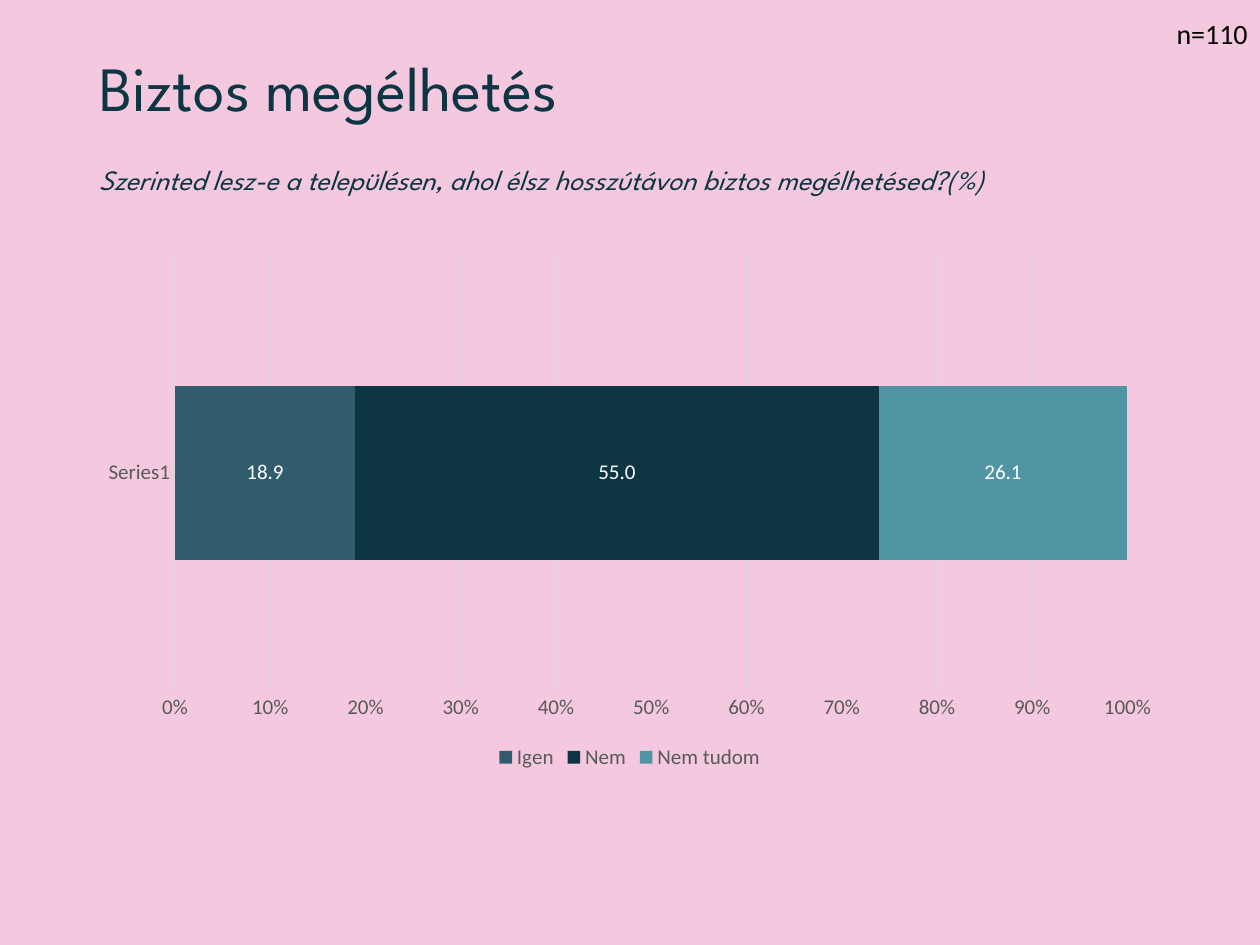
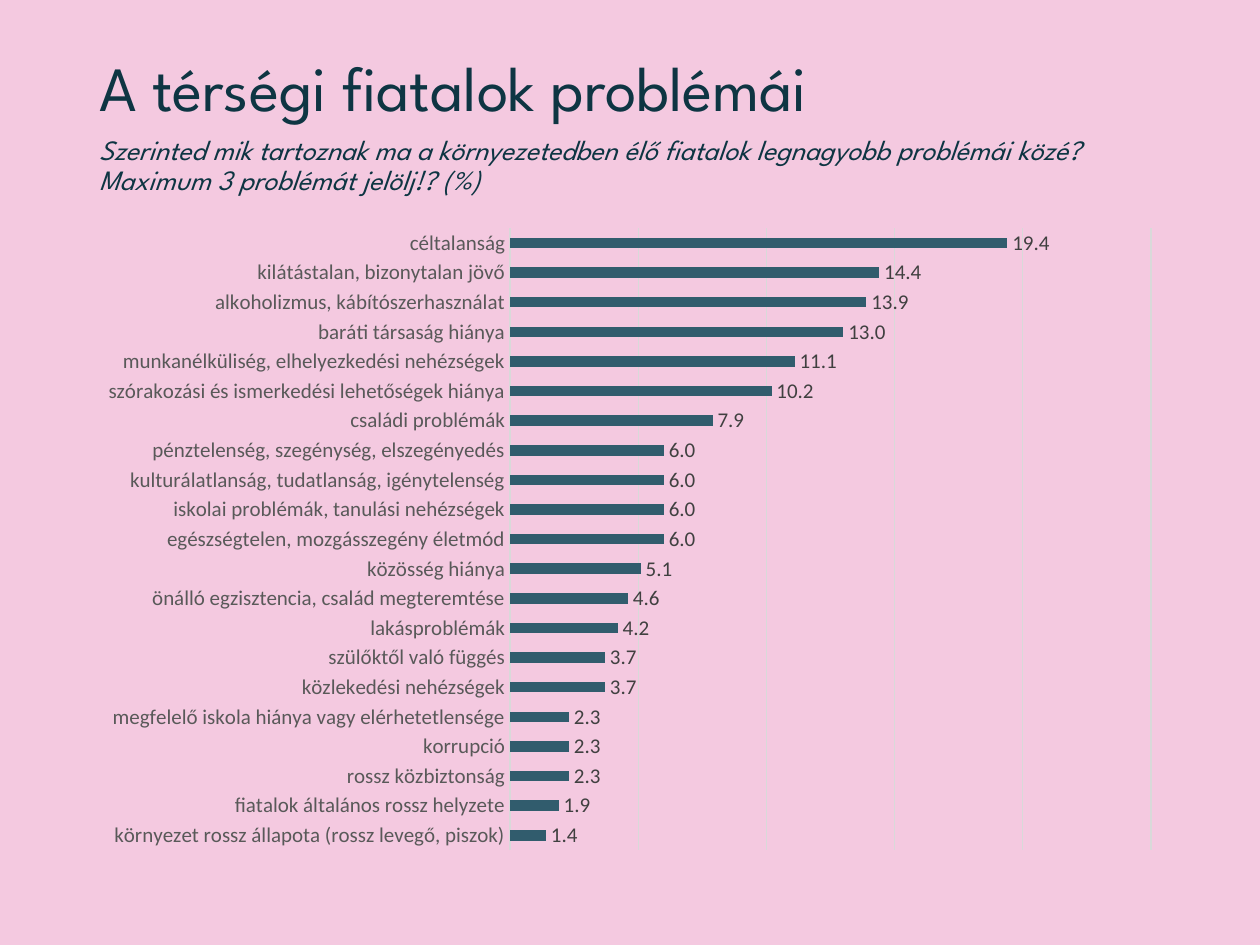
from pptx import Presentation
from pptx.chart.data import CategoryChartData
from pptx.dml.color import RGBColor
from pptx.enum.chart import (XL_CHART_TYPE, XL_LABEL_POSITION,
                             XL_LEGEND_POSITION, XL_TICK_MARK)
from pptx.enum.text import MSO_ANCHOR, PP_ALIGN
from pptx.util import Cm, Pt

PINK, NAVY, SLATE, TEAL = "F4C9E0", "0E3543", "315C6D", "5195A4"
GREY, DARK_GREY, LINE_GREY, WHITE, BLACK = "595959", "404040", "D9D9D9", "FFFFFF", "000000"
LEFT, CHART_WIDTH, QUESTION_WIDTH = 1.75, 21.89, 21.41

TITLE = {"name": "League Spartan", "size": Pt(36), "color": NAVY}
QUESTION = {"name": "League Spartan", "size": Pt(16), "color": NAVY, "italic": True}
SAMPLE = {"name": "Calibri", "size": Pt(16), "color": BLACK}
AXIS = {"name": "Calibri", "size": Pt(12), "color": GREY}
BAR_LABEL = {**AXIS, "color": DARK_GREY}
STACK_LABEL = {**AXIS, "color": WHITE}

LIVELIHOOD = {"Igen": (18.9, SLATE), "Nem": (55, NAVY), "Nem tudom": (26.1, TEAL)}
PROBLEMS = {
    "céltalanság": 19.4,
    "kilátástalan, bizonytalan jövő": 14.4,
    "alkoholizmus, kábítószerhasználat": 13.9,
    "baráti társaság hiánya": 13,
    "munkanélküliség, elhelyezkedési nehézségek": 11.1,
    "szórakozási és ismerkedési lehetőségek hiánya": 10.2,
    "családi problémák": 7.9,
    "pénztelenség, szegénység, elszegényedés": 6,
    "kulturálatlanság, tudatlanság, igénytelenség": 6,
    "iskolai problémák, tanulási nehézségek": 6,
    "egészségtelen, mozgásszegény életmód": 6,
    "közösség hiánya": 5.1,
    "önálló egzisztencia, család megteremtése": 4.6,
    "lakásproblémák": 4.2,
    "szülőktől való függés": 3.7,
    "közlekedési nehézségek": 3.7,
    "megfelelő iskola hiánya vagy elérhetetlensége": 2.3,
    "korrupció": 2.3,
    "rossz közbiztonság": 2.3,
    "fiatalok általános rossz helyzete": 1.9,
    "környezet rossz állapota (rossz levegő, piszok)": 1.4,
}


def paint(color_format, value):
    """Give a colour format the colour of a hex string."""
    color_format.rgb = RGBColor.from_string(value)


def fill_solid(fill, value):
    """Make a fill solid in one colour."""
    fill.solid()
    paint(fill.fore_color, value)


def format_font(font, values):
    """Set font attributes from a dict of format values."""
    for key, value in values.items():
        if key == "color":
            paint(font.color, value)
        else:
            setattr(font, key, value)


def add_text(page, words, place, values, align=PP_ALIGN.LEFT, spacing=0.9):
    """Add a wrapping text box with one paragraph."""
    box = page.shapes.add_textbox(*map(Cm, place))
    frame = box.text_frame
    frame.word_wrap = True
    frame.vertical_anchor = MSO_ANCHOR.TOP
    para = frame.paragraphs[0]
    para.alignment = align
    para.line_spacing = spacing
    span = para.add_run()
    span.text = words
    format_font(span.font, values)


def add_page(deck, title, question, question_top):
    """Add a pink page with its title and survey question."""
    page = deck.slides.add_slide(deck.slide_layouts[6])
    fill_solid(page.background.fill, PINK)
    add_text(page, title, (LEFT, 1.02, CHART_WIDTH, 2.03), TITLE)
    add_text(page, question, (LEFT, question_top, QUESTION_WIDTH, 1.37), QUESTION)
    return page


def draw_line(line):
    """Give a chart line its thin grey look."""
    paint(line.color, LINE_GREY)
    line.width = Pt(0.75)


def add_bars(page, kind, categories, series, top, height, gap, label_font, label_position):
    """Add a bar chart from a dict of series names to values and colours."""
    data = CategoryChartData(number_format="0.0")
    data.categories = categories
    for name, (values, _) in series.items():
        data.add_series(name, values)
    frame = page.shapes.add_chart(kind, *map(Cm, (LEFT, top, CHART_WIDTH, height)), data)
    chart = frame.chart
    chart.has_title = False
    chart.has_legend = False
    format_font(chart.font, AXIS)
    for axis in (chart.category_axis, chart.value_axis):
        axis.major_tick_mark = axis.minor_tick_mark = XL_TICK_MARK.NONE
        format_font(axis.tick_labels.font, AXIS)
    draw_line(chart.category_axis.format.line)
    chart.category_axis.has_major_gridlines = False
    chart.value_axis.format.line.fill.background()
    chart.value_axis.has_major_gridlines = True
    draw_line(chart.value_axis.major_gridlines.format.line)
    plot = chart.plots[0]
    plot.gap_width = gap
    plot.vary_by_categories = False
    for bars, (_, color) in zip(plot.series, series.values()):
        fill_solid(bars.format.fill, color)
        bars.invert_if_negative = False
        labels = bars.data_labels
        labels.show_value = True
        labels.position = label_position
        labels.number_format = "0.0"
        labels.number_format_is_linked = False
        format_font(labels.font, label_font)
    return chart


def add_livelihood(deck):
    """Add the page about a secure livelihood."""
    page = add_page(
        deck, "Biztos megélhetés",
        "Szerinted lesz-e a településen, ahol élsz hosszútávon biztos megélhetésed?(%)", 3.23)
    series = {name: ([value], color) for name, (value, color) in LIVELIHOOD.items()}
    chart = add_bars(page, XL_CHART_TYPE.BAR_STACKED_100, ["Series1"], series,
                     4.93, 10.69, 150, STACK_LABEL, XL_LABEL_POSITION.CENTER)
    chart.plots[0].overlap = 100
    chart.value_axis.major_unit = 0.1
    chart.value_axis.tick_labels.number_format = "0%"
    chart.value_axis.tick_labels.number_format_is_linked = False
    chart.has_legend = True
    chart.legend.position = XL_LEGEND_POSITION.BOTTOM
    chart.legend.include_in_layout = False
    format_font(chart.legend.font, AXIS)
    add_text(page, "n=110", (14.45, 0.2, 10.95, 0.94), SAMPLE, PP_ALIGN.RIGHT, 1.0)


def add_problems(deck):
    """Add the page about the problems of young people."""
    page = add_page(
        deck, "A térségi fiatalok problémái",
        "Szerinted mik tartoznak ma a környezetedben élő fiatalok legnagyobb problémái közé? "
        "Maximum 3 problémát jelölj!? (%)", 2.62)
    names, values = zip(*reversed(PROBLEMS.items()))
    chart = add_bars(page, XL_CHART_TYPE.BAR_CLUSTERED, names, {"Series 1": (values, SLATE)},
                     4.34, 13.06, 182, BAR_LABEL, XL_LABEL_POSITION.OUTSIDE_END)
    axis = chart.value_axis
    axis.minimum_scale, axis.maximum_scale, axis.major_unit = 0, 25, 5
    axis.visible = False


def main():
    """Build and save the deck."""
    deck = Presentation()
    deck.slide_width, deck.slide_height = Cm(25.4), Cm(19.05)
    add_livelihood(deck)
    add_problems(deck)
    deck.save("out.pptx")


if __name__ == "__main__":
    main()
